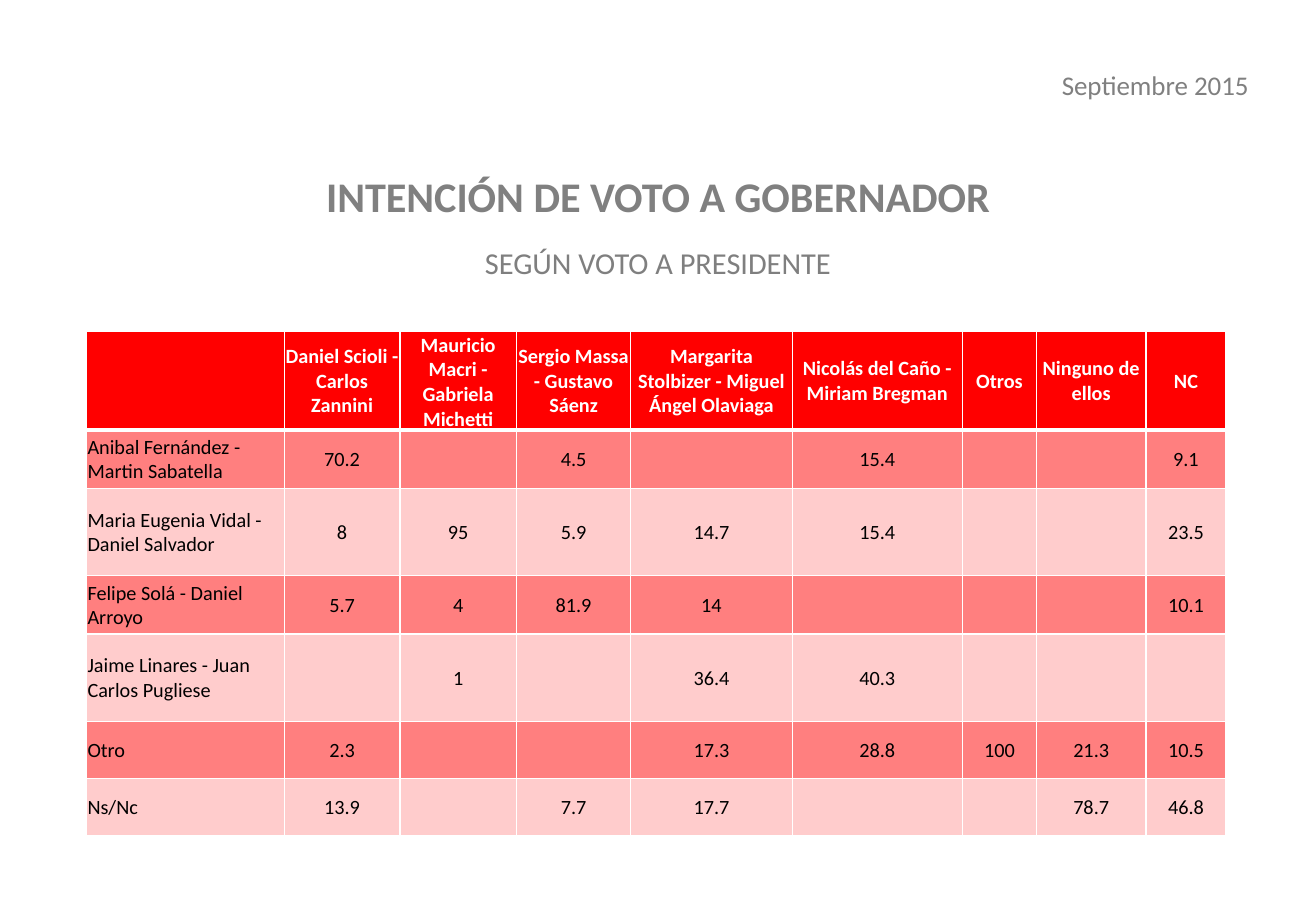
from lxml.etree import SubElement
from pptx import Presentation
from pptx.dml.color import RGBColor
from pptx.enum.text import MSO_ANCHOR, PP_ALIGN
from pptx.oxml.ns import qn
from pptx.util import Inches, Pt

SLIDE_W, SLIDE_H = 10.83, 7.5
RED, WHITE, BLACK, GREY = "FF0000", "FFFFFF", "000000", "808080"

# Table grid, in inches
COLUMNS = [1.63, 0.95, 0.96, 0.94, 1.33, 1.4, 0.61, 0.9, 0.66]
ROWS = [0.8, 0.48, 0.72, 0.48, 0.72, 0.47, 0.47]

VOTES = [
    ["", "Daniel Scioli - Carlos Zannini", "Mauricio Macri - Gabriela Michetti",
     "Sergio Massa - Gustavo Sáenz",
     "Margarita Stolbizer - Miguel Ángel Olaviaga",
     "Nicolás del Caño - Miriam Bregman", "Otros", "Ninguno de ellos", "NC"],
    ["Anibal Fernández - Martin Sabatella",
     "70.2", "", "4.5", "", "15.4", "", "", "9.1"],
    ["Maria Eugenia Vidal - Daniel Salvador",
     "8", "95", "5.9", "14.7", "15.4", "", "", "23.5"],
    ["Felipe Solá - Daniel Arroyo",
     "5.7", "4", "81.9", "14", "", "", "", "10.1"],
    ["Jaime Linares - Juan Carlos Pugliese",
     "", "1", "", "36.4", "40.3", "", "", ""],
    ["Otro", "2.3", "", "", "17.3", "28.8", "100", "21.3", "10.5"],
    ["Ns/Nc", "13.9", "", "7.7", "17.7", "", "", "78.7", "46.8"],
]


def rgb(color):
    return RGBColor.from_string(color)


def share(x, y, w, h):
    """Turn shares of the slide into left, top, width and height."""
    return [Inches(part * size)
            for part, size in zip((x, y, w, h), (SLIDE_W, SLIDE_H) * 2)]


def set_all(target, formats):
    for name, value in formats.items():
        setattr(target, name, value)


def write(p, text, size, color, align, bold=False):
    p.text = text
    p.alignment = align
    set_all(p.font, {"name": "Calibri", "size": Pt(size), "bold": bold})
    p.font.color.rgb = rgb(color)


def add_title(s, title, subtitle):
    sp = s.shapes.title
    box = share(0, 0.18, 1, 0.147)
    set_all(sp, dict(zip(("left", "top", "width", "height"), box)))
    tf = sp.text_frame
    set_all(tf, {"word_wrap": True, "vertical_anchor": MSO_ANCHOR.TOP})
    write(tf.paragraphs[0], title, 25, GREY, PP_ALIGN.CENTER, True)
    p = tf.add_paragraph()
    write(p, subtitle, 18, "7F7F7F", PP_ALIGN.CENTER)
    tf.paragraphs[0].space_before = Pt(0)
    p.space_before = Pt(14)


def add_date(s, text):
    tf = s.shapes.add_textbox(*share(0.791, 0.069, 0.167, 0.049)).text_frame
    tf.word_wrap = True
    write(tf.paragraphs[0], text, 16, GREY, PP_ALIGN.RIGHT)


def add_borders(cell, widths):
    tcPr = cell._tc.get_or_add_tcPr()
    for side, width in zip("LRTB", widths):
        ln = SubElement(tcPr, qn(f"a:ln{side}"), w=str(Pt(width)))
        fill = SubElement(ln, qn("a:solidFill"))
        SubElement(fill, qn("a:srgbClr"), val=WHITE)


def fill_cell(cell, color, opacity):
    cell.fill.solid()
    cell.fill.fore_color.rgb = rgb(color)
    if opacity < 100:
        clr = cell._tc.tcPr.find(f"{qn('a:solidFill')}/{qn('a:srgbClr')}")
        SubElement(clr, qn("a:alpha"), val=str(opacity * 1000))


def add_vote_table(s):
    left, top, width, height = share(0.0656, 0.364, 0.866, 0.552)
    table = s.shapes.add_table(len(ROWS), len(COLUMNS),
                               left, top, width, height).table
    for column, w in zip(table.columns, COLUMNS):
        column.width = Inches(w)
    for row, h in zip(table.rows, ROWS):
        row.height = Inches(h)

    margins = {"margin_left": Inches(0.01), "margin_right": Inches(0.01),
               "margin_top": Inches(0.01), "margin_bottom": 0,
               "vertical_anchor": MSO_ANCHOR.MIDDLE}
    for i, values in enumerate(VOTES):
        header = i == 0
        opacity = 100 if header else (50 if i % 2 else 20)
        for j, value in enumerate(values):
            cell = table.cell(i, j)
            set_all(cell, margins)
            add_borders(cell, (1, 1, 3 if i == 1 else 1, 3 if header else 1))
            fill_cell(cell, RED, opacity)
            write(cell.text_frame.paragraphs[0], value, 12,
                  WHITE if header else BLACK,
                  PP_ALIGN.CENTER if j else PP_ALIGN.LEFT, header)


def main():
    prs = Presentation()
    set_all(prs, {"slide_width": Inches(SLIDE_W),
                  "slide_height": Inches(SLIDE_H)})
    s = prs.slides.add_slide(prs.slide_layouts[5])
    # Heading
    add_title(s, "INTENCIÓN DE VOTO A GOBERNADOR", "SEGÚN VOTO A PRESIDENTE")
    add_date(s, "Septiembre 2015")
    # Vote for governor by vote for president
    add_vote_table(s)
    prs.save("out.pptx")


if __name__ == "__main__":
    main()
